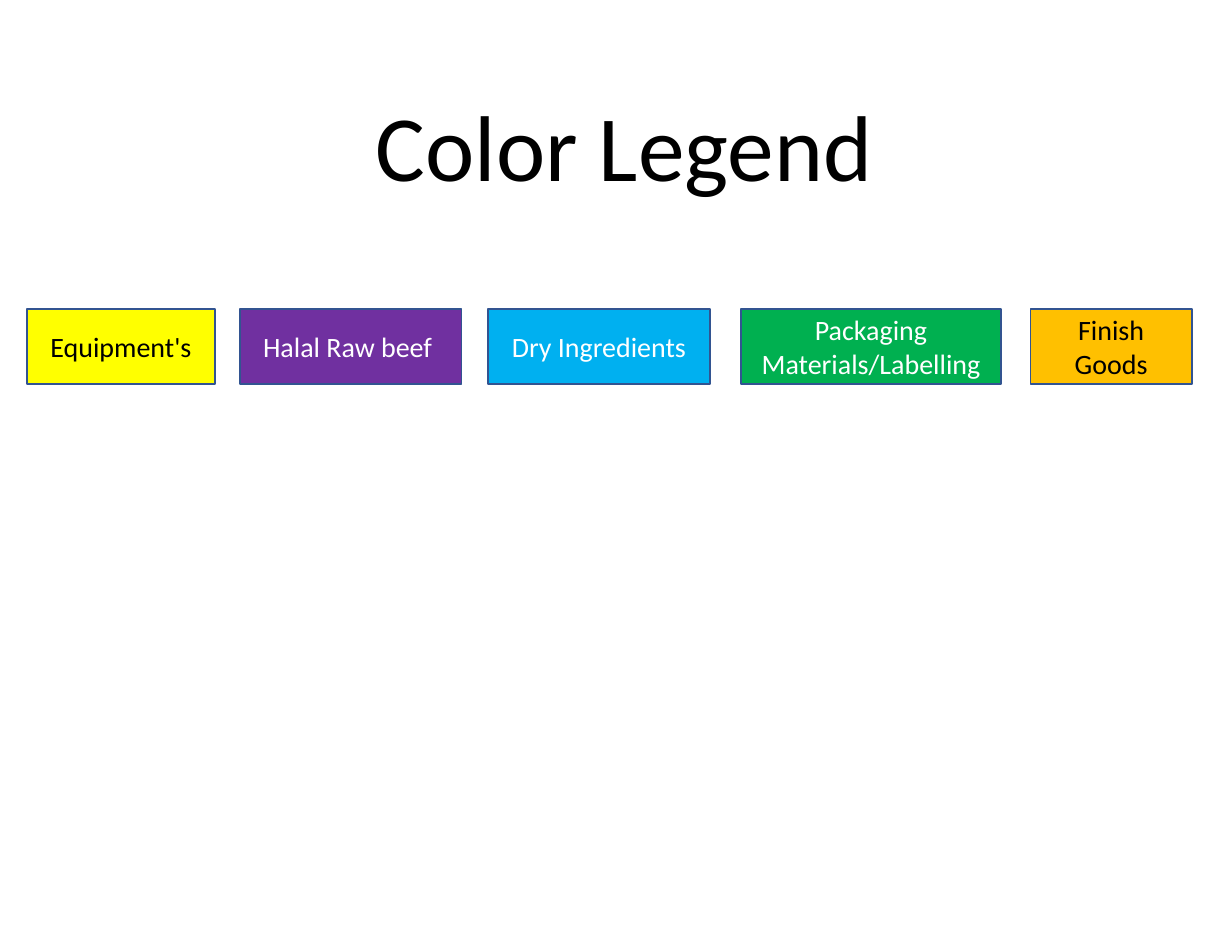
from pptx import Presentation
from pptx.dml.color import RGBColor
from pptx.enum.shapes import MSO_SHAPE
from pptx.enum.text import MSO_ANCHOR, MSO_AUTO_SIZE, PP_ALIGN
from pptx.util import Cm, Pt

RECTANGLE = MSO_SHAPE.RECTANGLE
TOP, MIDDLE = MSO_ANCHOR.TOP, MSO_ANCHOR.MIDDLE
CENTER = PP_ALIGN.CENTER
FIT_SHAPE = MSO_AUTO_SIZE.SHAPE_TO_FIT_TEXT
TITLE_ONLY = 5

BLACK = RGBColor(0x00, 0x00, 0x00)
WHITE = RGBColor(0xFF, 0xFF, 0xFF)
YELLOW = RGBColor(0xFF, 0xFF, 0x00)
PURPLE = RGBColor(0x70, 0x30, 0xA0)
BLUE = RGBColor(0x00, 0xB0, 0xF0)
GREEN = RGBColor(0x00, 0xB0, 0x50)
ORANGE = RGBColor(0xFF, 0xC0, 0x00)
OUTLINE = RGBColor(0x32, 0x54, 0x91)

LEGEND_TOP, LEGEND_HEIGHT = Cm(7.01), Cm(1.7)

# Category, left and width in cm, fill, text colour
LEGEND = [
    ("Equipment's", 0.61, 4.27, YELLOW, BLACK),
    ("Halal Raw beef ", 5.44, 5.03, PURPLE, WHITE),
    ("Dry Ingredients", 11.07, 5.03, BLUE, WHITE),
    ("Packaging Materials/Labelling", 16.81, 5.89, GREEN, WHITE),
    ("Finish Goods", 23.37, 3.66, ORANGE, BLACK),
]


def write_centered(frame, text, size, color, anchor):
    frame.word_wrap = True
    frame.vertical_anchor = anchor
    paragraph = frame.paragraphs[0]
    paragraph.alignment = CENTER
    run = paragraph.add_run()
    run.text = text
    run.font.name = "Calibri"
    run.font.size = Pt(size)
    run.font.color.rgb = color


def set_title(slide, text):
    title = slide.shapes.title
    title.left, title.top = Cm(6.32), Cm(1.88)
    title.width, title.height = Cm(15.67), Cm(2.82)
    title.fill.solid()
    title.fill.fore_color.rgb = WHITE
    title.text_frame.auto_size = FIT_SHAPE
    write_centered(title.text_frame, text, 60, BLACK, TOP)


def add_legend_box(slide, category, left, width, fill, text_color):
    box = slide.shapes.add_shape(
        RECTANGLE, Cm(left), LEGEND_TOP, Cm(width), LEGEND_HEIGHT)
    box.shadow.inherit = False
    box.fill.solid()
    box.fill.fore_color.rgb = fill
    box.line.color.rgb = OUTLINE
    box.line.width = Pt(1)
    write_centered(box.text_frame, category, 18, text_color, MIDDLE)


def main():
    prs = Presentation()
    prs.slide_width, prs.slide_height = Cm(27.94), Cm(21.59)
    slide = prs.slides.add_slide(prs.slide_layouts[TITLE_ONLY])

    # Heading
    set_title(slide, "Color Legend")

    # Row of colour keys
    for entry in LEGEND:
        add_legend_box(slide, *entry)

    prs.save("out.pptx")


if __name__ == "__main__":
    main()
